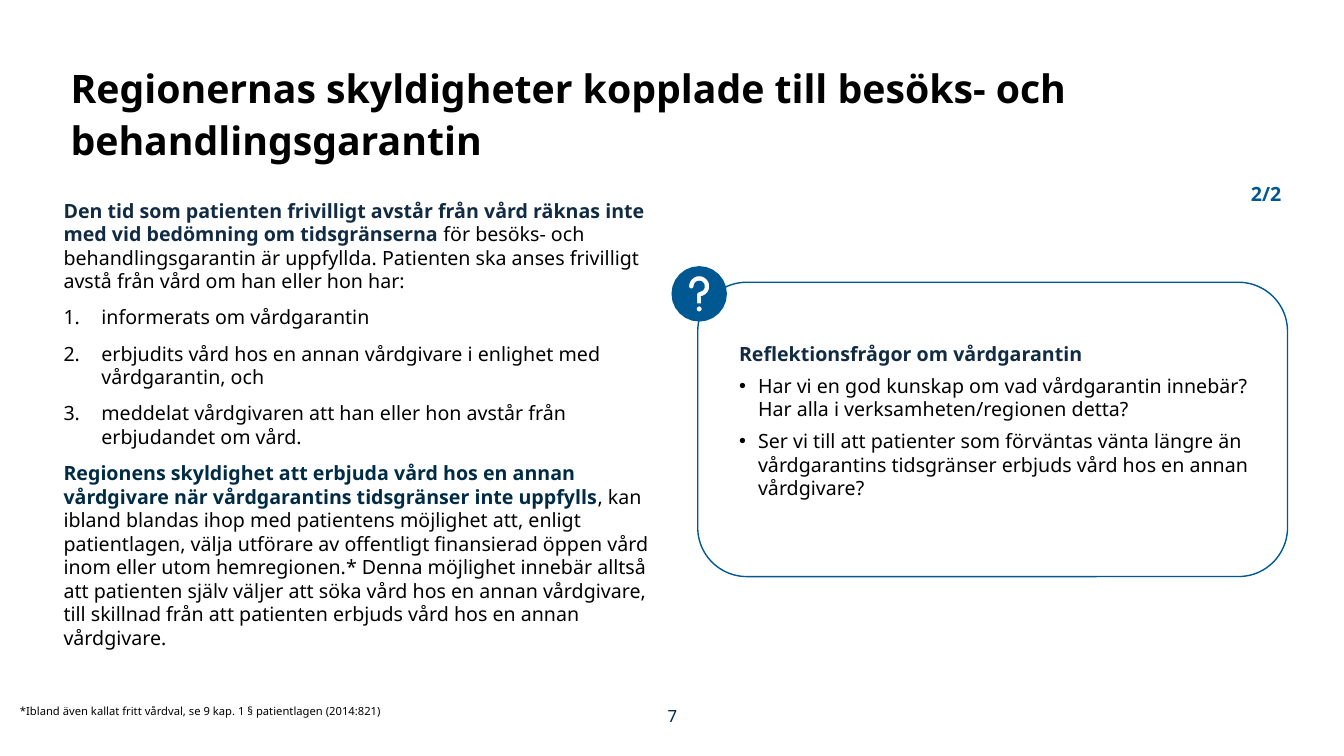
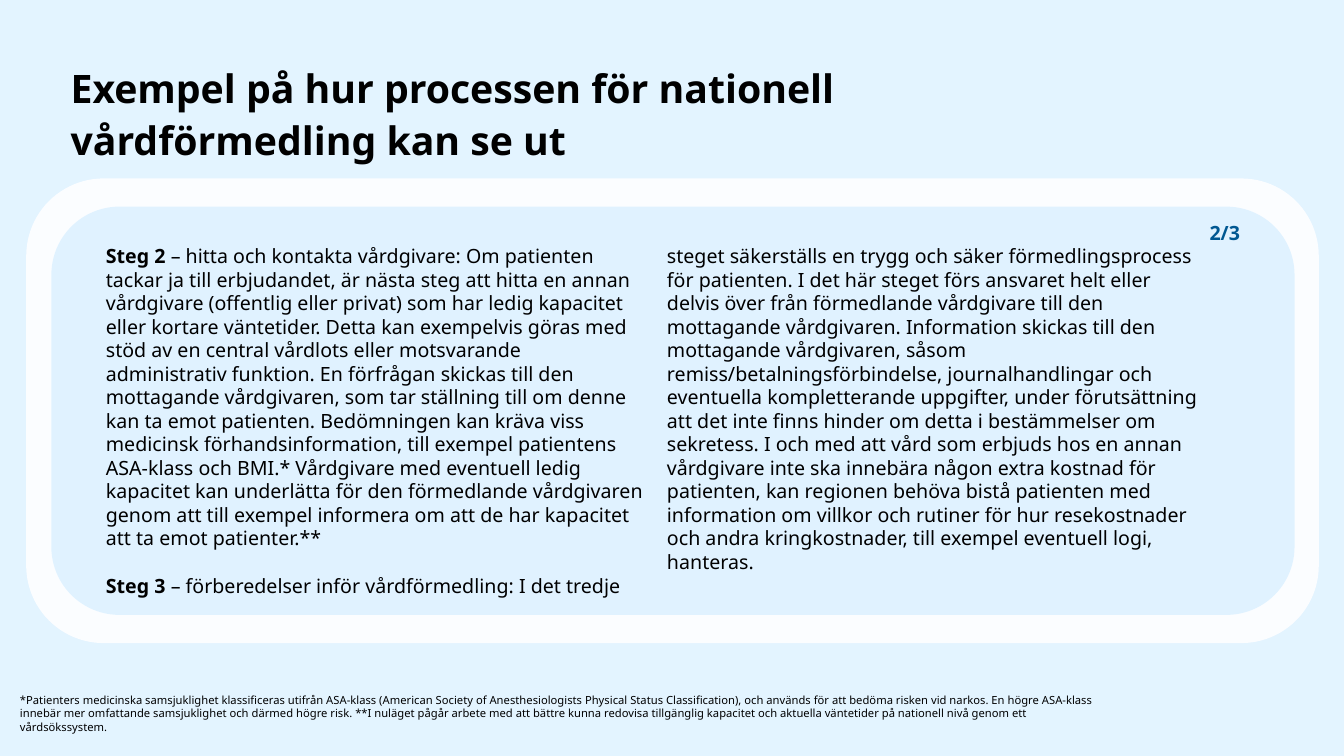
"""Builds two slides about the Swedish care guarantee."""
from dataclasses import dataclass
from math import cos, radians, sin

from lxml import etree
from pptx import Presentation
from pptx.dml.color import RGBColor
from pptx.enum.shapes import MSO_SHAPE
from pptx.enum.text import MSO_ANCHOR, MSO_AUTO_SIZE, PP_ALIGN
from pptx.oxml.ns import qn
from pptx.util import Inches, Pt

ROUNDED = MSO_SHAPE.ROUNDED_RECTANGLE
TOP, BOTTOM = MSO_ANCHOR.TOP, MSO_ANCHOR.BOTTOM
LEFT, CENTER, RIGHT = PP_ALIGN.LEFT, PP_ALIGN.CENTER, PP_ALIGN.RIGHT
FIXED = MSO_AUTO_SIZE.NONE
COLUMNS, ROWS = 133.3, 75
WIDTH, HEIGHT = Inches(13.33), Inches(7.5)
NO_INSETS = (0, 0, 0, 0)
TITLE_INSETS = (0, 0, 1, 0.5)
BOX_INSETS = (1, 0.5, 1, 0.5)
CARD_INSETS = (0, 0.5, 1, 0.5)
COUNTER_INSETS = (0, 0.5, 0, 0)


@dataclass(frozen=True)
class Theme:
    font: str = "Noto Sans"
    text: str = "000000"
    heading: str = "112B43"
    navy: str = "002B45"
    accent: str = "005892"
    sky: str = "91D5FF"
    white: str = "FFFFFF"
    pale: str = "E3F4FF"
    title_size: int = 28
    body_size: int = 14
    number_size: int = 12
    note_size: int = 8


@dataclass(frozen=True)
class Run:
    text: str
    color: str = Theme.text
    bold: bool = False


@dataclass(frozen=True)
class Block:
    runs: tuple
    marker: str = ""
    hang: float = 0
    before: float = 0
    after: float = 0
    align: PP_ALIGN = LEFT
    line_spacing: float = 1.0


def across(columns):
    return round(WIDTH * columns / COLUMNS)


def down(rows):
    return round(HEIGHT * rows / ROWS)


def arc(column, row, radius, start, end):
    steps = 24
    angles = [radians(start + (end - start) * step / steps) for step in range(steps + 1)]
    return [(across(column + radius * cos(angle)), down(row + radius * sin(angle)))
            for angle in angles]


class Deck:
    def __init__(self, theme):
        self.theme = theme
        self.presentation = Presentation()
        self.presentation.slide_width = WIDTH
        self.presentation.slide_height = HEIGHT
        self.slide = None

    def start(self, title, background):
        self.slide = self.presentation.slides.add_slide(self.presentation.slide_layouts[1])
        self.paint(self.slide.background.fill, background)
        block = Block((Run(title, bold=True),), line_spacing=1.1)
        shape = self.place(self.slide.shapes.title, 7, 5.9, 106.3, 11.8)
        self.set_text(shape, [block], self.theme.title_size, TITLE_INSETS)

    def paint(self, fill, color):
        fill.solid()
        fill.fore_color.rgb = RGBColor.from_string(color)

    def place(self, shape, column, row, columns, rows):
        shape.left, shape.top = across(column), down(row)
        shape.width, shape.height = across(columns), down(rows)
        self.slide.shapes._spTree.append(shape._element)
        return shape

    def set_text(self, shape, blocks, size, insets=BOX_INSETS, anchor=TOP):
        frame = shape.text_frame
        frame.word_wrap, frame.auto_size, frame.vertical_anchor = True, FIXED, anchor
        left, top, right, bottom = insets
        frame.margin_left, frame.margin_right = across(left), across(right)
        frame.margin_top, frame.margin_bottom = down(top), down(bottom)
        for index, block in enumerate(blocks):
            paragraph = frame.add_paragraph() if index else frame.paragraphs[0]
            self.mark(paragraph, block)
            paragraph.alignment = block.align
            paragraph.line_spacing = block.line_spacing
            paragraph.space_before = Pt(block.before)
            paragraph.space_after = Pt(block.after)
            for part in block.runs:
                run = paragraph.add_run()
                run.text = part.text
                run.font.name, run.font.size = self.theme.font, Pt(size)
                run.font.bold = part.bold
                run.font.color.rgb = RGBColor.from_string(part.color)

    def mark(self, paragraph, block):
        properties = paragraph._p.get_or_add_pPr()
        properties.set("marL", str(across(block.hang)))
        properties.set("indent", str(-across(block.hang)))
        if block.marker == "1.":
            etree.SubElement(properties, qn("a:buFont"), typeface="+mj-lt")
            etree.SubElement(properties, qn("a:buAutoNum"), type="arabicPeriod")
        elif block.marker:
            etree.SubElement(properties, qn("a:buFont"), typeface="Arial")
            etree.SubElement(properties, qn("a:buChar"), char=block.marker)
        else:
            etree.SubElement(properties, qn("a:buNone"))

    def body(self, position, blocks, insets=BOX_INSETS, columns=1, gap=0):
        shape = self.place(self.slide.placeholders[1], *position)
        self.set_text(shape, blocks, self.theme.body_size, insets)
        if columns > 1:
            properties = shape.text_frame._txBody.find(qn("a:bodyPr"))
            properties.set("numCol", str(columns))
            properties.set("spcCol", str(across(gap)))

    def text(self, position, blocks, size, insets=BOX_INSETS, anchor=TOP):
        shape = self.place(self.slide.shapes.add_textbox(0, 0, 0, 0), *position)
        self.set_text(shape, blocks, size, insets, anchor)

    def counter(self, text, column, row):
        block = Block((Run(text, self.theme.accent, True),), align=RIGHT)
        self.text((column, row, 9.7, 2.3), [block], self.theme.body_size,
                  COUNTER_INSETS, BOTTOM)

    def note(self, text, row, rows):
        self.text((1, row, 111, rows), [Block((Run(text),))], self.theme.note_size)

    def page_number(self, text):
        block = Block((Run(text, self.theme.navy),), align=CENTER)
        self.text((61.6, 69.5, 10.2, 4), [block], self.theme.number_size)

    def rounded(self, position):
        shape = self.place(self.slide.shapes.add_shape(ROUNDED, 0, 0, 0, 0), *position)
        shape.shadow.inherit = False
        return shape

    def panel(self, position, color, opacity):
        shape = self.rounded(position)
        self.paint(shape.fill, color)
        shape.line.fill.background()
        color_element = shape._element.spPr.find(qn("a:solidFill")).find(qn("a:srgbClr"))
        etree.SubElement(color_element, qn("a:alpha"), val=str(opacity * 1000))

    def card(self, position):
        shape = self.rounded(position)
        shape.fill.background()
        shape.line.color.rgb = RGBColor.from_string(self.theme.accent)
        shape.line.width = Pt(1)

    def question_badge(self, column, row):
        hook_row = row - 0.75
        stem = [(column + 0.2, row + 0.95), (column - 0.2, row + 0.95), (column - 0.2, row)]
        hook = (arc(column, hook_row, 1, 180, 440)
                + [(across(x), down(y)) for x, y in stem]
                + arc(column, hook_row, 0.55, 450, 180)
                + arc(column - 0.78, hook_row, 0.22, 0, 180))
        outline = arc(column, row, 2.75, 0, 360)
        dot = arc(column, row + 1.5, 0.25, 0, 360)
        builder = self.slide.shapes.build_freeform(*outline[0])
        builder.add_line_segments(outline[1:])
        for contour in (hook, dot):
            builder.move_to(*contour[0])
            builder.add_line_segments(contour[1:])
        shape = builder.convert_to_shape()
        shape.shadow.inherit = False
        self.paint(shape.fill, self.theme.accent)
        shape.line.fill.background()


def duties_slide(deck):
    theme = deck.theme
    deck.start("Regionernas skyldigheter kopplade till besöks- och behandlingsgarantin",
               theme.white)
    conditions = (
        "informerats om vårdgarantin",
        "erbjudits vård hos en annan vårdgivare i enlighet med vårdgarantin, och",
        "meddelat vårdgivaren att han eller hon avstår från erbjudandet om vård.",
    )
    introduction = Block((
        Run("Den tid som patienten frivilligt avstår från vård räknas inte med vid "
            "bedömning om tidsgränserna ", theme.heading, True),
        Run("för besöks- och behandlingsgarantin är uppfyllda. Patienten ska anses "
            "frivilligt avstå från vård om han eller hon har:"),
    ), after=9)
    duty = Block((
        Run("Regionens skyldighet att erbjuda vård hos en annan vårdgivare när "
            "vårdgarantins tidsgränser inte uppfylls", theme.navy, True),
        Run(", kan ibland blandas ihop med patientens möjlighet att, enligt "
            "patientlagen, välja utförare av offentligt finansierad öppen vård inom "
            "eller utom hemregionen.* Denna möjlighet innebär alltså att patienten "
            "själv väljer att söka vård hos en annan vårdgivare, till skillnad från "
            "att patienten erbjuds vård hos en annan vårdgivare."),
    ), after=9)
    numbered = [Block((Run(text),), "1.", 3.75, after=9) for text in conditions]
    deck.body((6.3, 19.7, 58.3, 45.1), [introduction, *numbered, duty], NO_INSETS)
    questions = (
        "Har vi en god kunskap om vad vårdgarantin innebär? "
        "Har alla i verksamheten/regionen detta?",
        "Ser vi till att patienter som förväntas vänta längre än vårdgarantins "
        "tidsgränser erbjuds vård hos en annan vårdgivare?",
    )
    heading = Block((Run("Reflektionsfrågor om vårdgarantin", theme.heading, True),), after=6)
    bullets = [Block((Run(text),), "•", 1.88, after=6) for text in questions]
    deck.card((69.2, 28, 58.5, 29.2))
    deck.text((73.3, 33.4, 52.8, 23.2), [heading, *bullets], theme.body_size, CARD_INSETS)
    deck.question_badge(69.35, 29.15)
    deck.note("*Ibland även kallat fritt vårdval, se 9 kap. 1 § patientlagen (2014:821)",
              69.4, 2.4)
    deck.page_number("7")
    deck.counter("2/2", 117.4, 18.1)


def process_slide(deck):
    theme = deck.theme
    deck.start("Exempel på hur processen för nationell vårdförmedling kan se ut", theme.pale)
    deck.panel((2.6, 17.7, 128.2, 46.1), theme.white, 88)
    deck.panel((5.1, 20.5, 123.3, 40.5), theme.sky, 25)
    deck.counter("2/3", 113.3, 22)
    second_step = Block((
        Run("Steg 2 ", bold=True),
        Run("– hitta och kontakta vårdgivare: Om patienten tackar ja till erbjudandet, "
            "är nästa steg att hitta en annan vårdgivare (offentlig eller privat) som "
            "har ledig kapacitet eller kortare väntetider. Detta kan exempelvis göras "
            "med stöd av en central vårdlots eller motsvarande administrativ funktion. "
            "En förfrågan skickas till den mottagande vårdgivaren, som tar ställning "
            "till om denne kan ta emot patienten. Bedömningen kan kräva viss medicinsk "
            "förhandsinformation, till exempel patientens ASA-klass och BMI.* "
            "Vårdgivare med eventuell ledig kapacitet kan underlätta för den "
            "förmedlande vårdgivaren genom att till exempel informera om att de har "
            "kapacitet att ta emot patienter.**"),
    ))
    third_step = Block((
        Run("Steg 3 ", bold=True),
        Run("– förberedelser inför vårdförmedling: I det tredje steget säkerställs en "
            "trygg och säker förmedlingsprocess för patienten. I det här steget förs "
            "ansvaret helt eller delvis över från förmedlande vårdgivare till den "
            "mottagande vårdgivaren. Information skickas till den mottagande "
            "vårdgivaren, såsom remiss/betalningsförbindelse, journalhandlingar och "
            "eventuella kompletterande uppgifter, under förutsättning att det inte "
            "finns hinder om detta i bestämmelser om sekretess. I och med att vård som "
            "erbjuds hos en annan vårdgivare inte ska innebära någon extra kostnad för "
            "patienten, kan regionen behöva bistå patienten med information om villkor "
            "och rutiner för hur resekostnader och andra kringkostnader, till exempel "
            "eventuell logi, hanteras."),
    ), before=16.8)
    deck.body((9.5, 23.7, 111.3, 37), [second_step, third_step], columns=2, gap=2)
    deck.note("*Patienters medicinska samsjuklighet klassificeras utifrån ASA-klass "
              "(American Society of Anesthesiologists Physical Status Classification), "
              "och används för att bedöma risken vid narkos. En högre ASA-klass innebär "
              "mer omfattande samsjuklighet och därmed högre risk. **I nuläget pågår "
              "arbete med att bättre kunna redovisa tillgänglig kapacitet och aktuella "
              "väntetider på nationell nivå genom ett vårdsökssystem.", 68.3, 5)


def main():
    deck = Deck(Theme())
    duties_slide(deck)
    process_slide(deck)
    deck.presentation.save("out.pptx")


if __name__ == "__main__":
    main()
